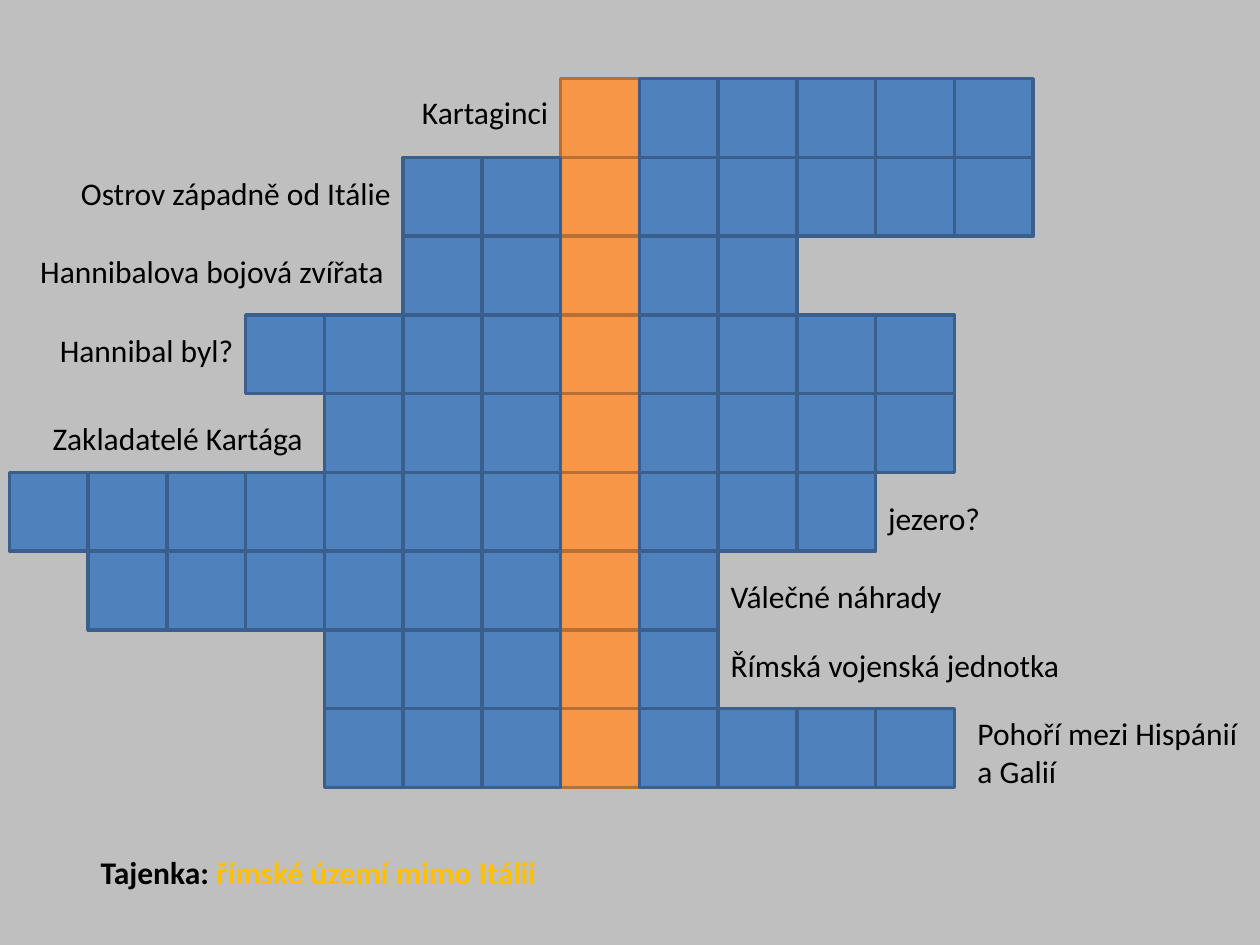
"""Build a crossword slide about the Punic Wars."""
from pptx import Presentation
from pptx.dml.color import RGBColor
from pptx.enum.shapes import MSO_SHAPE
from pptx.enum.text import MSO_AUTO_SIZE, PP_ALIGN
from pptx.util import Inches, Pt

BACKGROUND = RGBColor(0xBF, 0xBF, 0xBF)
BLUE = RGBColor(0x4F, 0x81, 0xBD)
BLUE_EDGE = RGBColor(0x3A, 0x5F, 0x8C)
ORANGE = RGBColor(0xF7, 0x96, 0x46)
ORANGE_EDGE = RGBColor(0xB7, 0x6F, 0x34)
BLACK = RGBColor(0, 0, 0)
GOLD = RGBColor(0xFF, 0xC0, 0)

CELL = 5 / 8
KEY_LEFT = 4.45
ROWS = [(0, 5), (2, 5), (2, 2), (4, 4), (3, 4), (7, 3), (6, 1), (3, 1), (3, 4)]
CLUES = [
    ("Kartaginci", 2.42, 0.69, 2.03, 0.4, PP_ALIGN.RIGHT),
    ("Ostrov západně od Itálie", 0, 1.33, 3.2, 0.4, PP_ALIGN.RIGHT),
    ("Hannibalova bojová zvířata ", 0, 1.95, 3.2, 0.4, PP_ALIGN.RIGHT),
    ("Hannibal byl?", 0.31, 2.58, 1.64, 0.4, PP_ALIGN.RIGHT),
    ("Zakladatelé Kartága", 0.23, 3.28, 2.27, 0.4, PP_ALIGN.RIGHT),
    ("jezero?", 6.95, 3.91, 1.8, 0.4, PP_ALIGN.LEFT),
    ("Válečné náhrady", 5.7, 4.53, 2.5, 0.4, PP_ALIGN.LEFT),
    ("Římská vojenská jednotka", 5.7, 5.08, 3.12, 0.4, PP_ALIGN.LEFT),
    ("Pohoří mezi Hispánií a Galií", 7.66, 5.62, 2.34, 0.71, PP_ALIGN.LEFT),
]


def add_text(paragraph, text, *, font="Calibri", size=18, color=BLACK, bold=False):
    run = paragraph.add_run()
    run.text = text
    run.font.name = font
    run.font.size = Pt(size)
    run.font.color.rgb = color
    run.font.bold = bold


class CrosswordSlide:
    def __init__(self, slide):
        self.slide = slide
        self.line_width = Pt(2)
        slide.background.fill.solid()
        slide.background.fill.fore_color.rgb = BACKGROUND

    def cell(self, row, offset, fill, edge):
        shape = self.slide.shapes.add_shape(
            MSO_SHAPE.RECTANGLE,
            Inches(KEY_LEFT + offset * CELL), Inches((row + 1) * CELL),
            Inches(CELL), Inches(CELL))
        shape.shadow.inherit = False
        shape.fill.solid()
        shape.fill.fore_color.rgb = fill
        shape.line.color.rgb = edge
        shape.line.width = self.line_width

    def label(self, left, top, width, height, alignment=PP_ALIGN.LEFT):
        box = self.slide.shapes.add_textbox(
            Inches(left), Inches(top), Inches(width), Inches(height))
        box.text_frame.word_wrap = True
        box.text_frame.auto_size = MSO_AUTO_SIZE.SHAPE_TO_FIT_TEXT
        paragraph = box.text_frame.paragraphs[0]
        paragraph.alignment = alignment
        return paragraph


def main():
    presentation = Presentation()
    presentation.slide_width = Inches(10)
    presentation.slide_height = Inches(7.5)
    crossword = CrosswordSlide(
        presentation.slides.add_slide(presentation.slide_layouts[6]))

    for row in range(len(ROWS)):
        crossword.cell(row, 0, ORANGE, ORANGE_EDGE)
    for row, (before, after) in enumerate(ROWS):
        for offset in range(-before, after + 1):
            if offset:
                crossword.cell(row, offset, BLUE, BLUE_EDGE)

    for text, *placement in CLUES:
        add_text(crossword.label(*placement), text)

    solution = crossword.label(0.7, 6.72, 7.03, 0.4)
    add_text(solution, "Tajenka: ", bold=True)
    add_text(solution, "římské území mimo Itálii", color=GOLD, bold=True)

    presentation.save("out.pptx")


if __name__ == "__main__":
    main()
